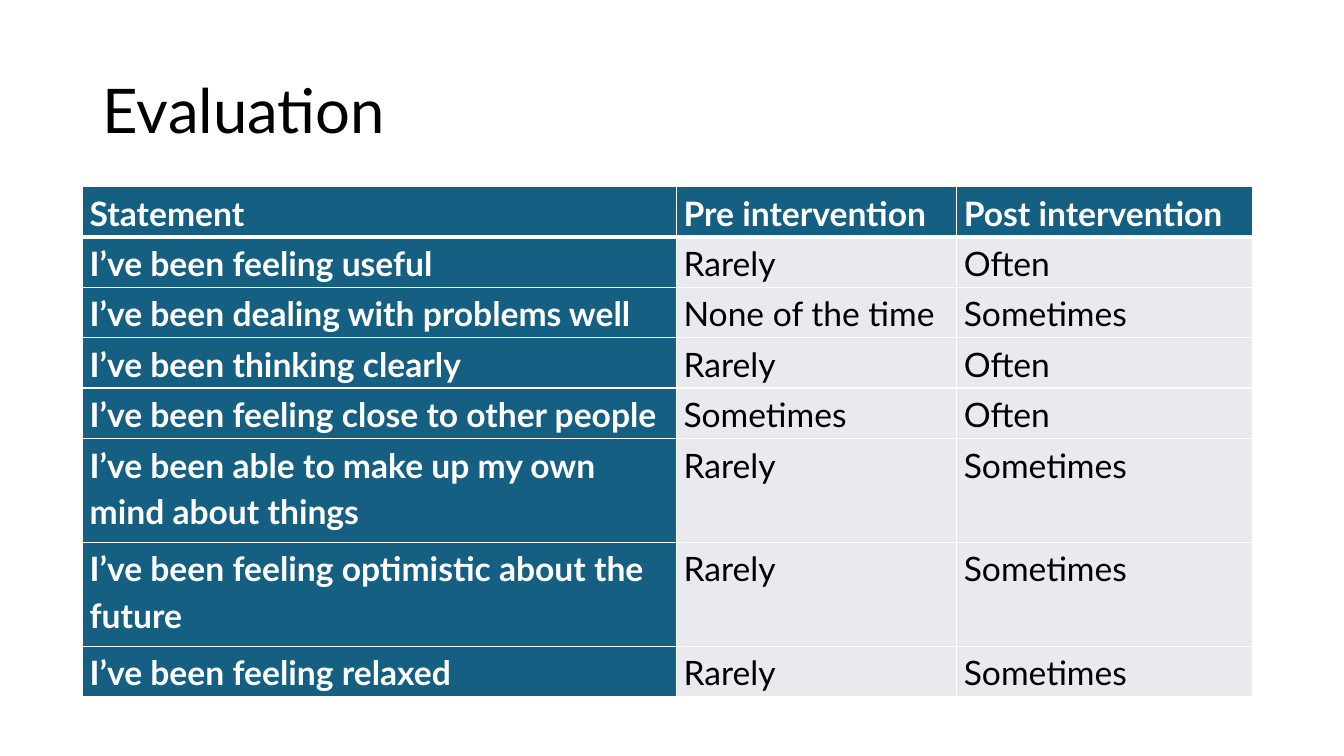
from dataclasses import dataclass

from lxml.etree import SubElement as Sub
from pptx import Presentation
from pptx.dml.color import RGBColor as RGB
from pptx.enum.text import MSO_ANCHOR as Anchor
from pptx.oxml.ns import qn
from pptx.util import Inches, Pt


@dataclass(frozen=True)
class Theme:
    font: str = "Lato"
    title: int = 44
    body: int = 24
    ink: str = "000000"
    paper: str = "FFFFFF"
    head: str = "156082"
    pale: str = "E8EAED"
    thin: int = 1
    thick: int = 3


THEME = Theme()
WIDE, HIGH = 13.33, 7.5
COLS = [5.89, 2.78, 2.93]
LINE, DOUBLE = 0.5, 1.03
WRAP = 40  # letters that fit on one line of the first column

ROWS = [
    ("Statement", "Pre intervention", "Post intervention"),
    ("I’ve been feeling useful", "Rarely", "Often"),
    ("I’ve been dealing with problems well", "None of the time", "Sometimes"),
    ("I’ve been thinking clearly", "Rarely", "Often"),
    ("I’ve been feeling close to other people", "Sometimes", "Often"),
    ("I’ve been able to make up my own mind about things", "Rarely", "Sometimes"),
    ("I’ve been feeling optimistic about the future", "Rarely", "Sometimes"),
    ("I’ve been feeling relaxed", "Rarely", "Sometimes"),
]


def style(para, size, color, bold=False):
    font = para.runs[0].font
    font.name, font.size, font.bold = THEME.font, Pt(size), bold
    font.color.rgb = RGB.from_string(color)


def add_title(slide, box, text):
    frame = slide.shapes.add_textbox(*map(Inches, box)).text_frame
    frame.word_wrap = True
    frame.vertical_anchor = Anchor.MIDDLE
    frame.text = text
    para = frame.paragraphs[0]
    para.line_spacing = 0.9
    style(para, THEME.title, THEME.ink)


def rule(cell, row):
    """Draw the cell's borders, with a thick line under the header row."""
    props = cell._tc.get_or_add_tcPr()
    for side in "LRTB":
        heavy = (row, side) in {(0, "B"), (1, "T")}
        width = Pt(THEME.thick if heavy else THEME.thin)
        line = Sub(props, qn(f"a:ln{side}"), w=str(width))
        fill = Sub(line, qn("a:solidFill"))
        Sub(fill, qn("a:srgbClr"), val=THEME.paper)


def fill_cell(cell, text, row, col):
    label = row == 0 or col == 0
    cell.margin_left = cell.margin_right = Inches(0.07)
    cell.margin_top = cell.margin_bottom = 0
    rule(cell, row)
    cell.fill.solid()
    cell.fill.fore_color.rgb = RGB.from_string(THEME.head if label else THEME.pale)
    cell.text_frame.text = text
    para = cell.text_frame.paragraphs[0]
    para.line_spacing, para.space_after = 1.16, Pt(8)
    style(para, THEME.body, THEME.paper if label else THEME.ink, label)


def add_grid(slide, left, top):
    highs = [DOUBLE if len(row[0]) > WRAP else LINE for row in ROWS]
    box = map(Inches, (left, top, sum(COLS), sum(highs)))
    table = slide.shapes.add_table(len(ROWS), len(COLS), *box).table
    table.first_col = True
    table.horz_banding = False
    for col, width in zip(table.columns, COLS):
        col.width = Inches(width)
    for i, (texts, high) in enumerate(zip(ROWS, highs)):
        table.rows[i].height = Inches(high)
        for j, text in enumerate(texts):
            fill_cell(table.cell(i, j), text, i, j)


def main():
    deck = Presentation()
    deck.slide_width, deck.slide_height = Inches(WIDE), Inches(HIGH)
    slide = deck.slides.add_slide(deck.slide_layouts[6])
    add_title(slide, (0.92, 0.4, 11.5, 1.45), "Evaluation")
    add_grid(slide, 0.82, 1.85)
    deck.save("out.pptx")


if __name__ == "__main__":
    main()
